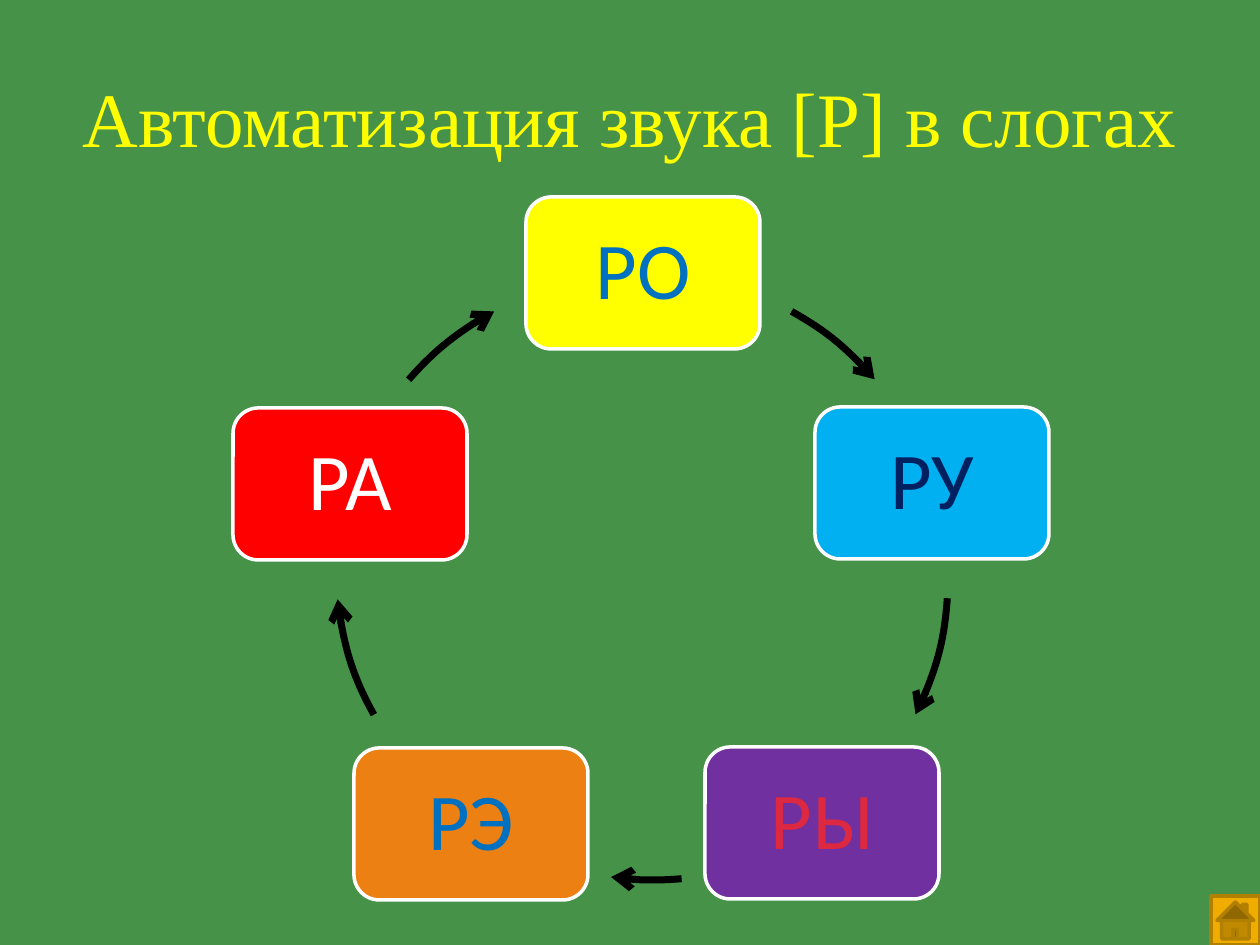
import pptx
import pptx.util
import pptx.dml.color
import pptx.enum.shapes
import pptx.enum.text
import pptx.oxml
import pptx.oxml.ns

SHAPES = pptx.enum.shapes.MSO_SHAPE
EMU_PER_PX = 914400 / 126


def px(length):
    return pptx.util.Emu(round(length * EMU_PER_PX))


def color(hex_string):
    return pptx.dml.color.RGBColor.from_string(hex_string)


class CycleSlide:
    ground = "479249"
    title_font = "Times New Roman"
    card_font = "Calibri"
    card_size = (234, 152)
    ring = 609

    def __init__(self, deck):
        self.page = deck.slides.add_slide(deck.slide_layouts[6])
        fill = self.page.background.fill
        fill.solid()
        fill.fore_color.rgb = color(self.ground)

    def label(self, shape, text, font, size, ink, spacing=1.0):
        frame = shape.text_frame
        frame.word_wrap = True
        frame.vertical_anchor = pptx.enum.text.MSO_ANCHOR.MIDDLE
        para = frame.paragraphs[0]
        para.alignment = pptx.enum.text.PP_ALIGN.CENTER
        para.line_spacing = spacing
        span = para.add_run()
        span.text = text
        span.font.name = font
        span.font.size = pptx.util.Pt(size)
        span.font.color.rgb = color(ink)

    def title(self, text, left, top, width, height):
        box = self.page.shapes.add_textbox(px(left), px(top), px(width), px(height))
        self.label(box, text, self.title_font, 44, "FFFF00")

    def shape(self, kind, left, top, width, height, fill, line, weight):
        shape = self.page.shapes.add_shape(kind, px(left), px(top), px(width), px(height))
        shape.shadow.inherit = False
        if fill is None:
            shape.fill.background()
        else:
            shape.fill.solid()
            shape.fill.fore_color.rgb = color(fill)
        shape.line.color.rgb = color(line)
        shape.line.width = pptx.util.Pt(weight)
        return shape

    def card(self, text, left, top, fill, ink):
        card = self.shape(SHAPES.ROUNDED_RECTANGLE, left, top, *self.card_size,
                          fill, "FFFFFF", 2)
        self.label(card, text, self.card_font, 46, ink, 0.9)

    def arc_arrow(self, left, top, start, end):
        """Arrow along a circle; angles in degrees, clockwise from the right."""
        arc = self.shape(SHAPES.ARC, left, top, self.ring, self.ring, None, "000000", 4)
        # Arc angles are in 1/60000 degree, adjustments in 1/100000
        for index, angle in enumerate((start, end)):
            arc.adjustments[index] = angle * 0.6
        tail = pptx.oxml.parse_xml(
            f'<a:tailEnd {pptx.oxml.ns.nsdecls("a")} type="arrow"/>')
        arc.line._get_or_add_ln().append(tail)

    def home_button(self, left, top, size):
        self.shape(SHAPES.ACTION_BUTTON_HOME, left, top, size, size, "F0AD00", "B28000", 2)


def main():
    deck = pptx.Presentation()
    deck.slide_width, deck.slide_height = px(1260), px(945)
    slide = CycleSlide(deck)

    # Title
    slide.title("Автоматизация звука [Р] в слогах", 63, 38, 1134, 157)

    # Syllables, clockwise from the top, each with the arrow to the next one
    steps = [
        (("РО", 526, 197, "FFFF00", "0070C0"), (339, 273, 299.1, 319.4)),
        (("РУ", 815, 407, "00B0F0", "002060"), (339, 273, 3.9, 26.7)),
        (("РЫ", 705, 747, "7030A0", "DC2840"), (349, 271, 84.7, 98)),
        (("РЭ", 354, 748, "ED8013", "0070C0"), (336, 263, 151.1, 174)),
        (("РА", 233, 408, "FF0000", "FFFFFF"), (334, 275, 221, 241.7)),
    ]
    for card, arrow in steps:
        slide.card(*card)
        slide.arc_arrow(*arrow)

    # Navigation
    slide.home_button(1211, 896, 49)

    deck.save("out.pptx")


if __name__ == "__main__":
    main()
